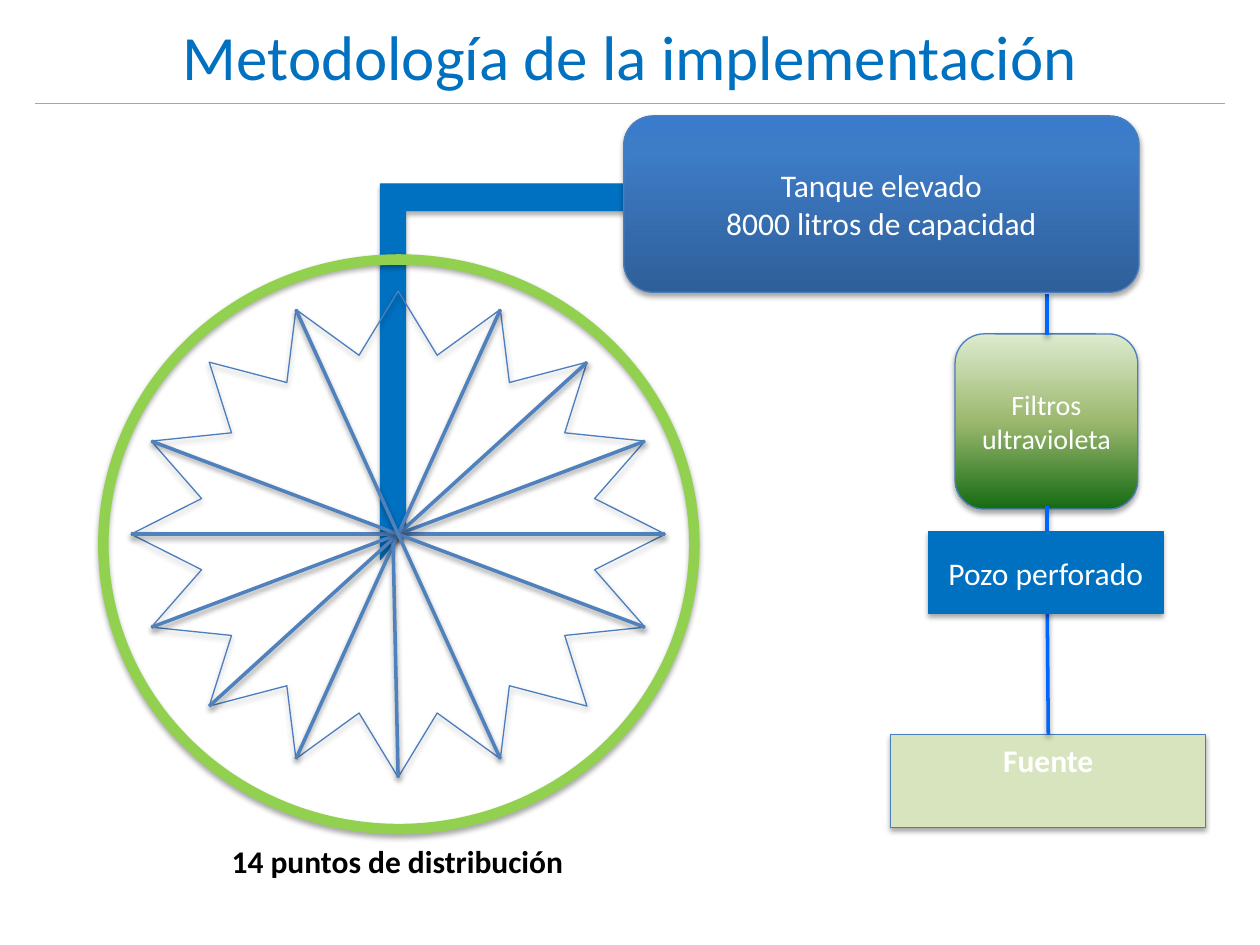
from math import cos, pi, sin
from pptx import Presentation
from pptx.dml.color import RGBColor
from pptx.enum.shapes import MSO_CONNECTOR as Link, MSO_SHAPE as Form
from pptx.enum.text import MSO_ANCHOR as Anchor, PP_ALIGN as Align
from pptx.oxml import parse_xml
from pptx.oxml.ns import nsdecls
from pptx.util import Inches, Pt

WIDTH, HEIGHT = 10, 7.5
BLUE, PIPE, SPOKE, EDGE, WHITE = "0070C0", "0066FF", "4F81BD", "4B7EBC", "FFFFFF"
STAR = (1.04, 2.31, 4.24, 3.86)
TIPS = 16
HUB_START = (3.12, 4.31)
DIAMETERS = (8, 7, 14, 13, 9, 11)
BOTTOM_TIP = 4

PIPE_FRAME = dict(form=Form.HALF_FRAME, at=(3.02, 1.46, 2.36, 2.98), fill=BLUE,
                  line=BLUE, adjust=(0.089, 0.084))
RING = dict(form=Form.OVAL, at=(0.82, 2.06, 4.69, 4.52), line="92D050", weight=6)
SOURCE = dict(form=Form.RECTANGLE, at=(7.07, 5.83, 2.5, 0.74), fill="D7E4BD",
              lines=["Fuente"], bold=True, anchor=Anchor.TOP)
FILTERS = dict(form=Form.ROUNDED_RECTANGLE, at=(7.58, 2.65, 1.45, 1.39),
               gradient=(90, [(0, "DDEBCF"), (50, "9CB86E"), (100, "156B13")]),
               lines=["Filtros ultravioleta"], size=16)
WELL = dict(form=Form.RECTANGLE, at=(7.37, 4.22, 1.86, 0.65), fill=BLUE, line=BLUE,
            lines=["Pozo perforado"])
TANK = dict(form=Form.ROUNDED_RECTANGLE, at=(4.95, 0.92, 4.09, 1.4),
            gradient=(270, [(0, "2F5F99"), (80, "3D7CC7"), (100, "3A7CCB")]),
            lines=["Tanque elevado", "8000 litros de capacidad"])
STAR_SHAPE = dict(form=Form.STAR_16_POINT, at=STAR)
PIPES = [((8.31, 4.6), (8.32, 5.83)), ((8.31, 2.66), (8.31, 2.33)),
         ((8.31, 4.36), (8.31, 4.02))]


def color(value):
    return RGBColor.from_string(value)


def inches(values):
    return [Inches(value) for value in values]


def add_effect(item, alpha=None, distance=1.8):
    shadow = "" if alpha is None else (
        f'<a:outerShdw blurRad="{Pt(3.1)}" dist="{Pt(distance)}" dir="5400000" '
        f'rotWithShape="0"><a:srgbClr val="000000"><a:alpha val="{alpha * 1000}"/>'
        '</a:srgbClr></a:outerShdw>')
    item._element.spPr.append(
        parse_xml(f'<a:effectLst {nsdecls("a")}>{shadow}</a:effectLst>'))


def add_gradient(shape, angle, stops):
    marks = "".join(f'<a:gs pos="{share * 1000}"><a:srgbClr val="{value}"/></a:gs>'
                    for share, value in stops)
    shape._element.spPr.append(parse_xml(
        f'<a:gradFill {nsdecls("a")} rotWithShape="1"><a:gsLst>{marks}</a:gsLst>'
        f'<a:lin ang="{angle * 60000}" scaled="0"/></a:gradFill>'))


def write(frame, lines, size=18, ink=WHITE, bold=False, anchor=Anchor.MIDDLE):
    frame.word_wrap = True
    frame.vertical_anchor = anchor
    look = {"name": "Calibri", "size": Pt(size), "bold": bold}
    for index, line in enumerate(lines):
        para = frame.add_paragraph() if index else frame.paragraphs[0]
        para.alignment = Align.CENTER
        span = para.add_run()
        span.text = line
        span.font.color.rgb = color(ink)
        for key, value in look.items():
            setattr(span.font, key, value)


def add_shape(page, form, at, fill=None, gradient=None, line=EDGE, weight=0.75,
              adjust=(), lines=(), **text):
    shape = page.shapes.add_shape(form, *inches(at))
    for index, value in enumerate(adjust):
        shape.adjustments[index] = value
    if gradient:
        add_gradient(shape, *gradient)
    elif fill:
        shape.fill.solid()
        shape.fill.fore_color.rgb = color(fill)
    else:
        shape.fill.background()
    shape.line.color.rgb = color(line)
    shape.line.width = Pt(weight)
    add_effect(shape, 35)
    write(shape.text_frame, lines, **text)


def add_line(page, start, end, ink, weight=2, alpha=38):
    line = page.shapes.add_connector(Link.STRAIGHT, *inches(start + end))
    line.line.color.rgb = color(ink)
    line.line.width = Pt(weight)
    add_effect(line, alpha, 1.6)


def star_tip(index):
    left, top, width, height = STAR
    angle = 2 * pi * index / TIPS
    return (left + width / 2 * (1 + cos(angle)), top + height / 2 * (1 + sin(angle)))


def main():
    """Build the water distribution slide."""
    deck = Presentation()
    deck.slide_width, deck.slide_height = inches((WIDTH, HEIGHT))
    page = deck.slides.add_slide(deck.slide_layouts[5])
    for shape in (PIPE_FRAME, RING, SOURCE, FILTERS):
        add_shape(page, **shape)
    for start, end in PIPES:
        add_line(page, start, end, PIPE)
    for shape in (WELL, TANK, STAR_SHAPE):
        add_shape(page, **shape)
    for index in DIAMETERS:
        add_line(page, star_tip(index), star_tip(index + TIPS // 2), SPOKE)
    add_line(page, HUB_START, star_tip(BOTTOM_TIP), SPOKE)

    caption = page.shapes.add_textbox(*inches((0.43, 6.63, 5.45, 0.4)))
    write(caption.text_frame, ["14 puntos de distribución"], ink="000000", bold=True,
          anchor=Anchor.TOP)
    title = page.shapes.title
    place = dict(zip(("left", "top", "width", "height"), inches((0.5, 0.05, 9, 0.77))))
    for key, value in place.items():
        setattr(title, key, value)
    write(title.text_frame, ["Metodología de la implementación"], size=36, ink=BLUE)
    add_line(page, (0.28, 0.82), (WIDTH - 0.28, 0.82), "A6A6A6", 0.75, None)
    deck.save("out.pptx")


if __name__ == "__main__":
    main()
